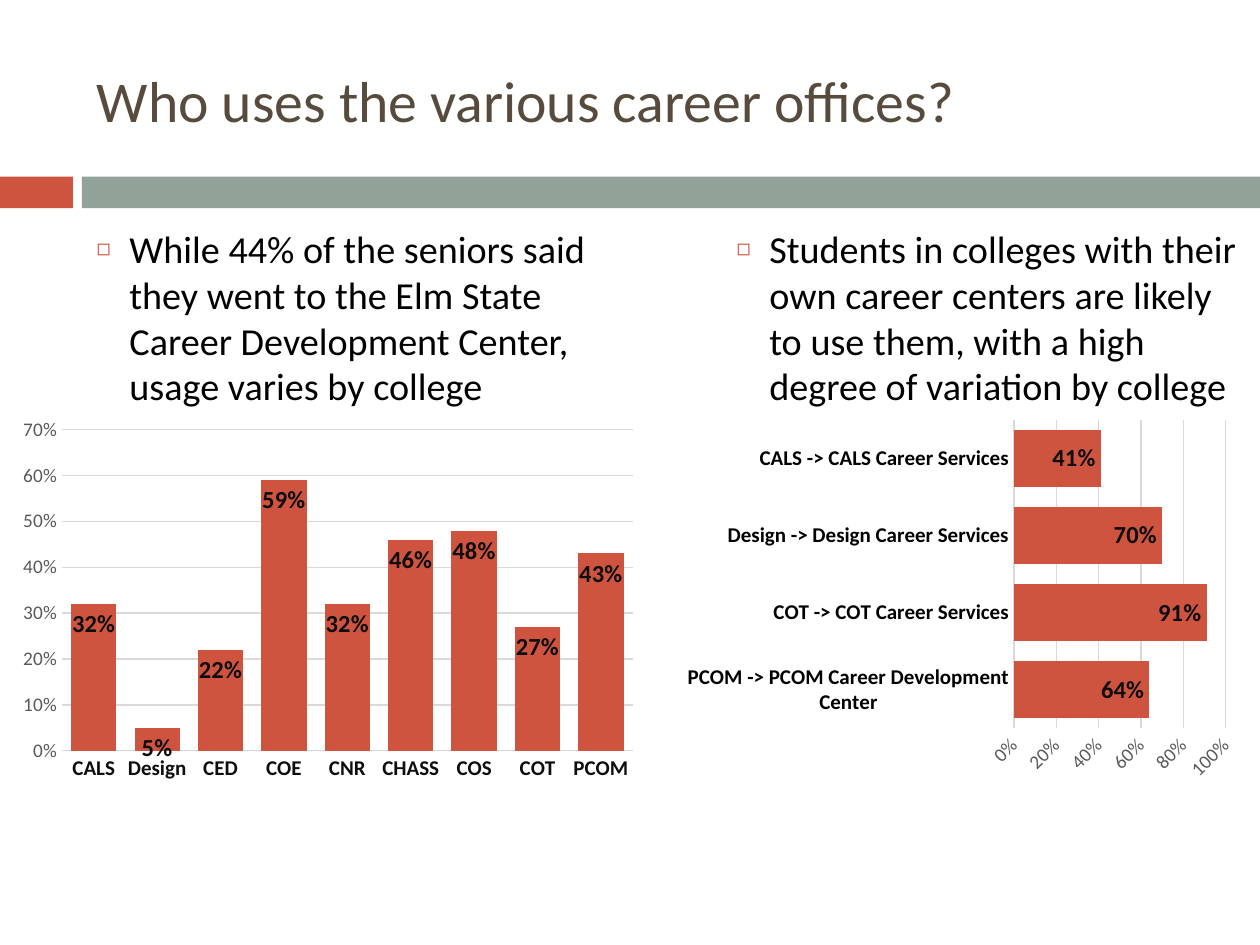
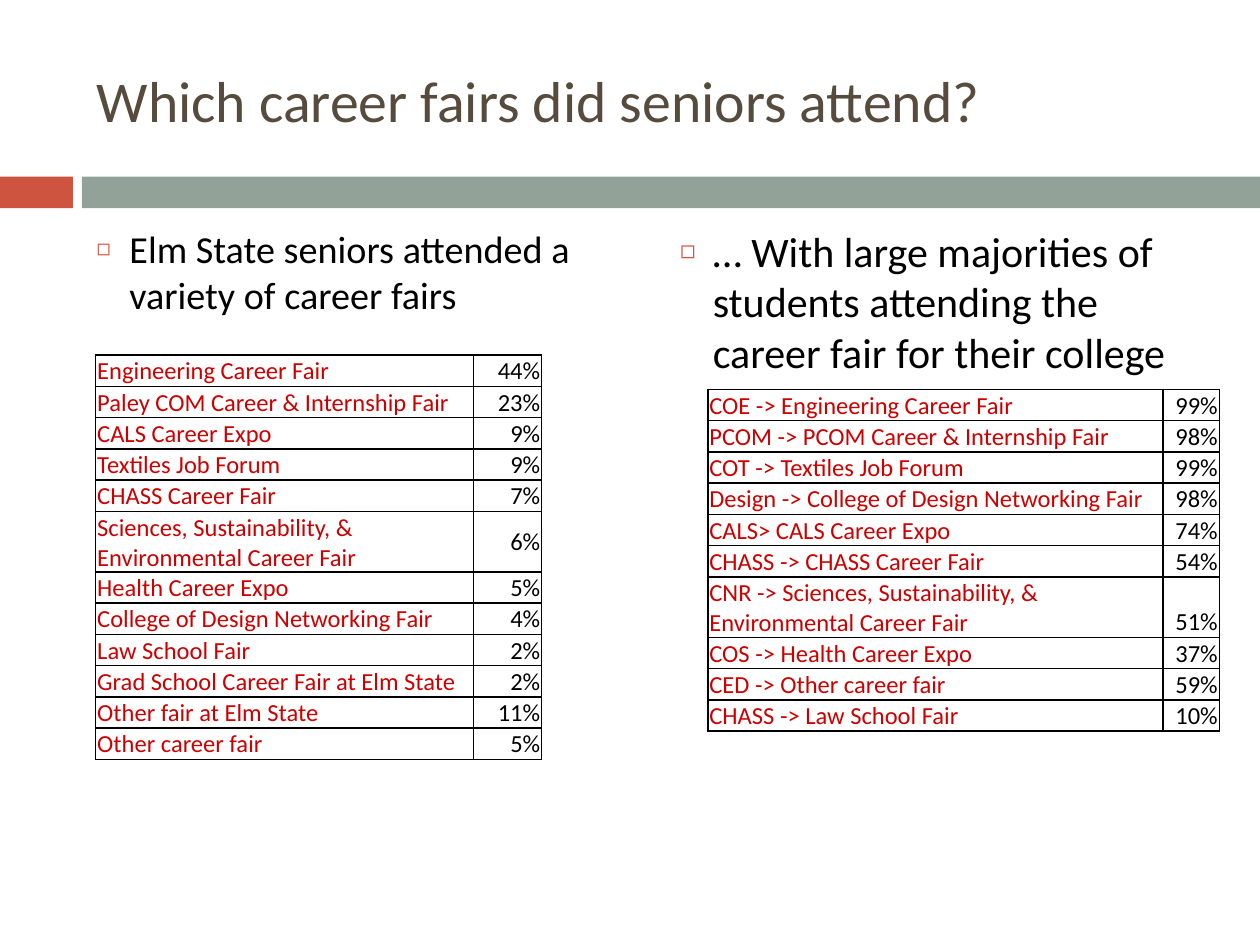
import dataclasses
import typing

import lxml.etree
import pptx
import pptx.chart.data
import pptx.dml.color
import pptx.enum.chart
import pptx.enum.shapes
import pptx.enum.text
import pptx.oxml.ns
import pptx.util

# Shared look
FONT = "Calibri"
RUST, SAGE, BROWN = "CF543F", "93A299", "564B3C"
BLACK, INK, GRAY, PALE, RED = "000000", "0D0D0D", "595959", "D9D9D9", "CC0000"

Cm = pptx.util.Cm
Pt = pptx.util.Pt
ALIGN = pptx.enum.text.PP_ALIGN
ANCHOR = pptx.enum.text.MSO_ANCHOR
KIND = pptx.enum.chart.XL_CHART_TYPE


@dataclasses.dataclass
class Box:
    """Place and size in centimetres."""
    left: float
    top: float
    width: float
    height: float

    def spots(self) -> tuple:
        return tuple(Cm(n) for n in dataclasses.astuple(self))


@dataclasses.dataclass
class Point:
    left: float
    text: str
    size: float = 21.8


@dataclasses.dataclass
class Graph:
    box: Box
    kind: typing.Any
    data: dict[str, float]
    gap: int
    lap: int
    top: float
    step: float
    ink: str
    plot: tuple[float, float, float, float]
    turn: int = 0


@dataclasses.dataclass
class Grid:
    left: float
    top: float
    cols: tuple[float, float]
    anchor: typing.Any
    data: dict[str, str]


BANDS = [(Box(0, 3.56, 1.47, 0.64), RUST), (Box(1.65, 3.56, 23.75, 0.64), SAGE)]
TITLE = Box(1.7, 0.64, 22.66, 2.74)
ROW = 0.63

USE = Graph(
    Box(0.23, 8.28, 12.78, 7.62), KIND.COLUMN_CLUSTERED,
    {"CALS": 0.32, "Design": 0.05, "CED": 0.22, "COE": 0.59, "CNR": 0.32,
     "CHASS": 0.46, "COS": 0.48, "COT": 0.27, "PCOM": 0.43},
    40, -27, 0.7, 0.1, INK, (0.08, 0.05, 0.9, 0.85))
OWN = Graph(
    Box(13.64, 8.31, 11.53, 7.59), KIND.BAR_CLUSTERED,
    {"PCOM -> PCOM Career Development Center": 0.64,
     "COT -> COT Career Services": 0.91,
     "Design -> Design Career Services": 0.7,
     "CALS -> CALS Career Services": 0.41},
    35, 0, 1, 0.2, BLACK, (0.59, 0.02, 0.37, 0.82), -45)

FAIRS = Grid(1.93, 7.16, (7.62, 1.37), ANCHOR.MIDDLE, {
    "Engineering Career Fair": "44%",
    "Paley COM Career & Internship Fair": "23%",
    "CALS Career Expo": "9%",
    "Textiles Job Forum": "9%",
    "CHASS Career Fair": "7%",
    "Sciences, Sustainability, & Environmental Career Fair": "6%",
    "Health Career Expo": "5%",
    "College of Design Networking Fair": "4%",
    "Law School Fair": "2%",
    "Grad School Career Fair at Elm State": "2%",
    "Other fair at Elm State": "11%",
    "Other career fair": "5%",
})
SHARES = Grid(14.27, 7.85, (9.17, 1.14), ANCHOR.BOTTOM, {
    "COE -> Engineering Career Fair": "99%",
    "PCOM -> PCOM Career & Internship Fair": "98%",
    "COT -> Textiles Job Forum": "99%",
    "Design -> College of Design Networking Fair": "98%",
    "CALS> CALS Career Expo": "74%",
    "CHASS -> CHASS Career Fair": "54%",
    "CNR -> Sciences, Sustainability, & Environmental Career Fair": "51%",
    "COS -> Health Career Expo": "37%",
    "CED -> Other career fair": "59%",
    "CHASS -> Law School Fair": "10%",
})


# Small helpers
def paint(tint: str) -> pptx.dml.color.RGBColor:
    return pptx.dml.color.RGBColor.from_string(tint)


def fill(part, tint: str) -> None:
    part.fill.solid()
    part.fill.fore_color.rgb = paint(tint)


def style(font, size: float, tint: str, bold: bool = False) -> None:
    font.name, font.size, font.bold = FONT, Pt(size), bold
    font.color.rgb = paint(tint)


def add_run(para, text: str, size: float, tint: str) -> None:
    run = para.add_run()
    run.text = text
    style(run.font, size, tint)


def add_tag(node, name: str, **attrs: str):
    return lxml.etree.SubElement(node, pptx.oxml.ns.qn(name), attrs)


def add_text(slide, box: Box, text: str, size: float, tint: str, anchor):
    frame = slide.shapes.add_textbox(*box.spots()).text_frame
    frame.word_wrap = True
    frame.vertical_anchor = anchor
    para = frame.paragraphs[0]
    add_run(para, text, size, tint)
    return para


# Slide parts
def add_base(deck, title: str, points: list[Point]):
    slide = deck.slides.add_slide(deck.slide_layouts[6])
    for box, tint in BANDS:
        band = slide.shapes.add_shape(
            pptx.enum.shapes.MSO_SHAPE.RECTANGLE, *box.spots())
        band.shadow.inherit = False
        band.line.fill.background()
        fill(band, tint)
    add_text(slide, TITLE, title, 33, BROWN, ANCHOR.MIDDLE)
    for point in points:
        add_point(slide, point)
    return slide


def add_point(slide, point: Point) -> None:
    box = Box(point.left, 4.42, 10.8, 12.7)
    para = add_text(slide, box, point.text, point.size, BLACK, ANCHOR.TOP)
    para.space_before = Pt(5.2)
    props = para._p.get_or_add_pPr()
    props.set("marL", str(Cm(0.66)))
    props.set("indent", str(-Cm(0.66)))
    add_tag(add_tag(props, "a:buClr"), "a:srgbClr", val=RUST)
    add_tag(props, "a:buSzPct", val="60000")
    add_tag(props, "a:buFont", typeface=FONT)
    add_tag(props, "a:buChar", char="◻")


def place_plot(chart, spots: tuple[float, float, float, float]) -> None:
    area = chart._chartSpace.chart.plotArea
    for old in area.findall(pptx.oxml.ns.qn("c:layout")):
        area.remove(old)
    layout = add_tag(area, "c:layout")
    area.insert(0, layout)
    hand = add_tag(layout, "c:manualLayout")
    add_tag(hand, "c:layoutTarget", val="inner")
    for side in "xy":
        add_tag(hand, f"c:{side}Mode", val="edge")
    for side, spot in zip("xywh", spots):
        add_tag(hand, f"c:{side}", val=str(spot))


def add_graph(slide, graph: Graph) -> None:
    data = pptx.chart.data.CategoryChartData(number_format="0%")
    data.categories = list(graph.data)
    data.add_series("Series 1", list(graph.data.values()))
    chart = slide.shapes.add_chart(graph.kind, *graph.box.spots(), data).chart
    chart.has_legend = chart.has_title = False
    style(chart.font, 10, BLACK)
    place_plot(chart, graph.plot)

    # Bars and their labels
    plot = chart.plots[0]
    plot.gap_width, plot.overlap = graph.gap, graph.lap
    plot.vary_by_categories = False
    fill(plot.series[0].format, RUST)
    plot.has_data_labels = True
    labels = plot.data_labels
    labels.show_value = True
    labels.number_format, labels.number_format_is_linked = "0%", False
    labels.position = pptx.enum.chart.XL_LABEL_POSITION.INSIDE_END
    style(labels.font, 14, INK, True)

    # Axes
    cats, vals = chart.category_axis, chart.value_axis
    for axis in (cats, vals):
        axis.major_tick_mark = pptx.enum.chart.XL_TICK_MARK.NONE
        axis.minor_tick_mark = pptx.enum.chart.XL_TICK_MARK.NONE
    style(cats.tick_labels.font, 12, graph.ink, True)
    style(vals.tick_labels.font, 11, GRAY)
    vals.tick_labels.number_format = "0%"
    vals.tick_labels.number_format_is_linked = False
    vals.minimum_scale, vals.maximum_scale = 0, graph.top
    vals.major_unit = graph.step
    vals.has_major_gridlines = True
    vals.format.line.fill.background()
    for line in (cats.format.line, vals.major_gridlines.format.line):
        line.color.rgb = paint(PALE)
        line.width = Pt(0.75)
    if graph.turn:
        body = vals._element.txPr.find(pptx.oxml.ns.qn("a:bodyPr"))
        body.set("rot", str(graph.turn * 60000))


def add_cell(cell, text: str, tint: str, align, anchor) -> None:
    cell.margin_left = cell.margin_right = cell.margin_top = Cm(0.03)
    cell.margin_bottom = 0
    cell.vertical_anchor = anchor
    para = cell.text_frame.paragraphs[0]
    para.alignment = align
    add_run(para, text, 14, tint)
    props = cell._tc.get_or_add_tcPr()
    for side in "LRTB":
        edge = add_tag(props, f"a:ln{side}", w=str(Pt(1)))
        add_tag(add_tag(edge, "a:solidFill"), "a:srgbClr", val=BLACK)
    cell.fill.background()


def add_grid(slide, grid: Grid) -> None:
    count = len(grid.data)
    box = Box(grid.left, grid.top, sum(grid.cols), ROW * count)
    table = slide.shapes.add_table(count, 2, *box.spots()).table
    table.first_row = table.horz_banding = False
    for col, width in zip(table.columns, grid.cols):
        col.width = Cm(width)
    for row, (name, share) in zip(table.rows, grid.data.items()):
        row.height = Cm(ROW)
        add_cell(row.cells[0], name, RED, ALIGN.LEFT, ANCHOR.MIDDLE)
        add_cell(row.cells[1], share, BLACK, ALIGN.RIGHT, grid.anchor)


def main() -> None:
    deck = pptx.Presentation()
    deck.slide_width, deck.slide_height = Cm(25.4), Cm(19.05)

    # Career offices
    slide = add_base(deck, "Who uses the various career offices?", [
        Point(1.7, "While 44% of the seniors said they went to the Elm State "
                   "Career Development Center, usage varies by college"),
        Point(14.6, "Students in colleges with their own career centers are "
                    "likely to use them, with a high degree of variation "
                    "by college"),
    ])
    for graph in (USE, OWN):
        add_graph(slide, graph)

    # Career fairs
    slide = add_base(deck, "Which career fairs did seniors attend?", [
        Point(1.7, "Elm State seniors attended a variety of career fairs"),
        Point(13.46, "… With large majorities of students attending the "
                     "career fair for their college", 24),
    ])
    for grid in (FAIRS, SHARES):
        add_grid(slide, grid)

    deck.save("out.pptx")


if __name__ == "__main__":
    main()
